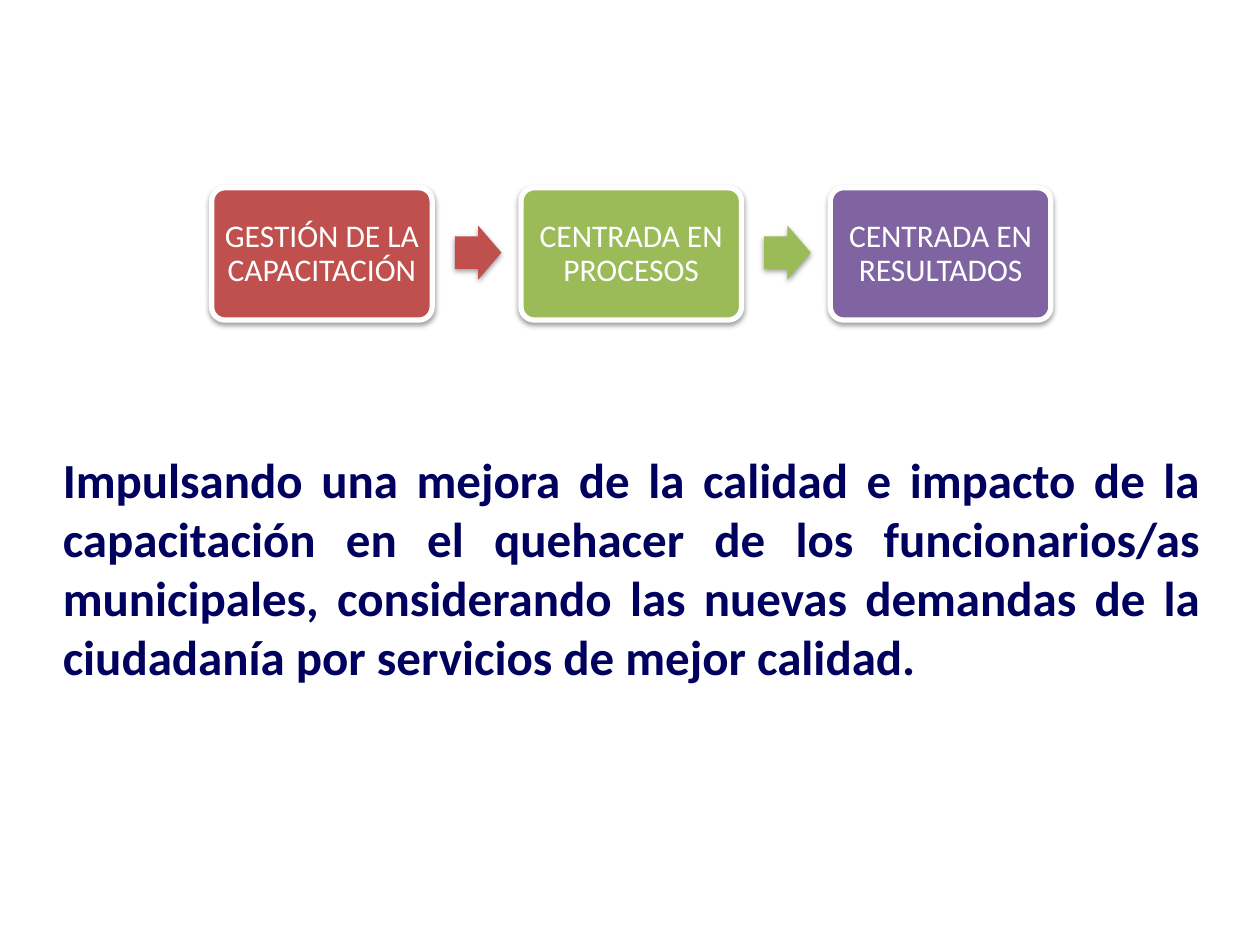
from dataclasses import dataclass

from lxml.etree import SubElement
from pptx import Presentation
from pptx.dml.color import RGBColor
from pptx.enum.shapes import MSO_SHAPE
from pptx.enum.text import MSO_ANCHOR, PP_ALIGN
from pptx.oxml.ns import qn
from pptx.util import Inches, Pt


@dataclass(frozen=True)
class Theme:
    font: str = "Calibri"
    white: str = "FFFFFF"
    navy: str = "00005F"
    red: str = "C0504D"
    green: str = "9BBB59"
    purple: str = "8064A2"
    shadow: str = "000000"
    step_size: int = 18
    statement_size: int = 28


class SlideBuilder:
    def __init__(self, slide, theme):
        self.slide = slide
        self.theme = theme

    def format_text(self, paragraph, size, color, bold=False):
        for run in paragraph.runs:
            run.font.name = self.theme.font
            run.font.size = Pt(size)
            run.font.bold = bold
            run.font.color.rgb = RGBColor.from_string(color)

    def add_shadow(self, shape):
        shape.shadow.inherit = False
        effects = shape.element.spPr.find(qn("a:effectLst"))
        shadow = SubElement(
            effects, qn("a:outerShdw"), blurRad=str(Pt(3.1)), dist=str(Pt(1.6)),
            dir="5400000", rotWithShape="0",
        )
        color = SubElement(shadow, qn("a:srgbClr"), val=self.theme.shadow)
        SubElement(color, qn("a:alpha"), val="38000")

    def add_block(self, preset, left, top, width, height, fill, adjustments):
        block = self.slide.shapes.add_shape(
            preset, Inches(left), Inches(top), Inches(width), Inches(height)
        )
        for index, value in enumerate(adjustments):
            block.adjustments[index] = value
        block.fill.solid()
        block.fill.fore_color.rgb = RGBColor.from_string(fill)
        block.line.fill.background()
        self.add_shadow(block)
        return block

    def add_step(self, label, left, top, width, height, fill):
        step = self.add_block(
            MSO_SHAPE.ROUNDED_RECTANGLE, left, top, width, height, fill, [0.1]
        )
        step.line.color.rgb = RGBColor.from_string(self.theme.white)
        step.line.width = Pt(3)
        frame = step.text_frame
        frame.text = label
        frame.word_wrap = True
        frame.vertical_anchor = MSO_ANCHOR.MIDDLE
        frame.margin_left = frame.margin_right = Inches(0.07)
        frame.margin_top = frame.margin_bottom = Inches(0.07)
        paragraph = frame.paragraphs[0]
        paragraph.alignment = PP_ALIGN.CENTER
        paragraph.line_spacing = 0.9
        self.format_text(paragraph, self.theme.step_size, self.theme.white)

    def add_arrow(self, left, top, width, height, fill):
        self.add_block(
            MSO_SHAPE.RIGHT_ARROW, left, top, width, height, fill, [0.6, 0.5]
        )

    def add_statement(self, text, left, top, width, height):
        statement = self.slide.shapes.add_textbox(
            Inches(left), Inches(top), Inches(width), Inches(height)
        )
        frame = statement.text_frame
        frame.word_wrap = True
        frame.text = text
        paragraph = frame.paragraphs[0]
        paragraph.alignment = PP_ALIGN.JUSTIFY
        self.format_text(
            paragraph, self.theme.statement_size, self.theme.navy, bold=True
        )


def main():
    presentation = Presentation()
    presentation.slide_width = Inches(10)
    presentation.slide_height = Inches(7.5)
    theme = Theme()
    builder = SlideBuilder(
        presentation.slides.add_slide(presentation.slide_layouts[6]), theme
    )

    steps = [
        ("GESTIÓN DE LA CAPACITACIÓN", theme.red),
        ("CENTRADA EN PROCESOS", theme.green),
        ("CENTRADA EN RESULTADOS", theme.purple),
    ]
    first_left, pitch, arrow_offset = 1.68, 2.455, 1.93
    for index, (label, color) in enumerate(steps):
        left = first_left + index * pitch
        builder.add_step(label, left, 1.49, 1.75, 1.05, color)
        if index < len(steps) - 1:
            builder.add_arrow(left + arrow_offset, 1.79, 0.37, 0.43, color)

    builder.add_statement(
        "Impulsando una mejora de la calidad e impacto de la capacitación en el "
        "quehacer de los funcionarios/as municipales, considerando las nuevas "
        "demandas de la ciudadanía por servicios de mejor calidad.",
        0.4, 3.52, 9.22, 2.46,
    )
    presentation.save("out.pptx")


if __name__ == "__main__":
    main()
